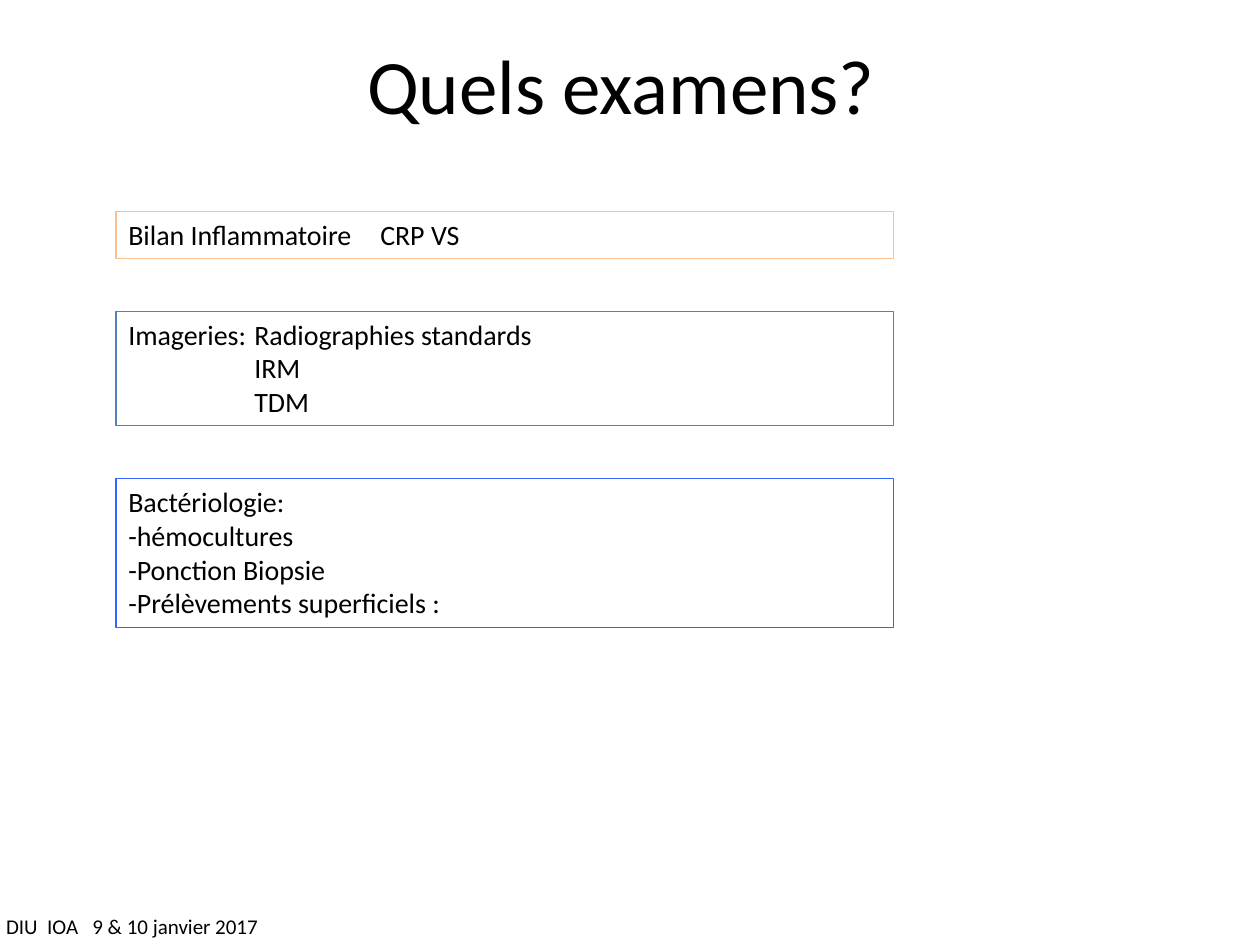
"""Build the slide listing the examinations to request."""
from lxml.etree import SubElement
from pptx import Presentation
from pptx.dml.color import RGBColor
from pptx.enum.shapes import MSO_SHAPE as Shape
from pptx.enum.text import MSO_ANCHOR as Anchor, PP_ALIGN as Align
from pptx.oxml.ns import qn
from pptx.util import Inches, Pt

BLACK = RGBColor(0x00, 0x00, 0x00)
ORANGE = RGBColor(0xFA, 0xC0, 0x90)
BLUE = RGBColor(0x4F, 0x81, 0xBD)
BRIGHT_BLUE = RGBColor(0x33, 0x66, 0xFF)

TITLE = "Quels examens? "
FOOTER = "DIU  IOA   9 & 10 janvier 2017"
EXAMS = [
    (ORANGE, ["Bilan Inflammatoire \tCRP VS"]),
    (BLUE, ["Imageries:\tRadiographies standards", "\tIRM", "\tTDM"]),
    (BRIGHT_BLUE, ["Bactériologie:", "-hémocultures", "-Ponction Biopsie",
                   "-Prélèvements superficiels :"]),
]

WIDTH, HEIGHT = 10, 7.5
BOX_LEFT, BOX_TOP, BOX_WIDTH = 0.92, 1.68, 6.17
LINE_HEIGHT, PADDING, GAP = 0.27, 0.1, 0.42
TAB_STOPS = (1, 2)


def write(shape, lines, size, align=Align.LEFT, anchor=Anchor.TOP, wrap=True):
    frame = shape.text_frame
    frame.word_wrap = wrap
    frame.vertical_anchor = anchor
    for index, line in enumerate(lines):
        paragraph = frame.add_paragraph() if index else frame.paragraphs[0]
        paragraph.alignment = align
        if "\t" in line:
            tabs = SubElement(paragraph._p.get_or_add_pPr(), qn("a:tabLst"))
            for stop in TAB_STOPS:
                SubElement(tabs, qn("a:tab"), pos=str(Inches(stop)), algn="l")
        run = paragraph.add_run()
        run.text = line
        run.font.name = "Calibri"
        run.font.size = Pt(size)
        run.font.color.rgb = BLACK


def add_exam_box(slide, top, height, color, lines):
    box = slide.shapes.add_shape(Shape.RECTANGLE, Inches(BOX_LEFT), Inches(top),
                                 Inches(BOX_WIDTH), Inches(height))
    box.shadow.inherit = False
    box.fill.background()
    box.line.color.rgb = color
    box.line.width = Pt(0.75)
    write(box, lines, 16)


def main():
    presentation = Presentation()
    presentation.slide_width, presentation.slide_height = Inches(WIDTH), Inches(HEIGHT)
    slide = presentation.slides.add_slide(presentation.slide_layouts[6])

    footer = slide.shapes.add_textbox(Inches(-0.05), Inches(7.2), Inches(2.23), Inches(0.3))
    write(footer, [FOOTER], 12, wrap=False)
    title = slide.shapes.add_textbox(Inches(0.5), Inches(0.22), Inches(WIDTH - 1), Inches(0.89))
    write(title, [TITLE], 44, Align.CENTER, Anchor.MIDDLE)

    top = BOX_TOP
    for color, lines in EXAMS:
        height = PADDING + LINE_HEIGHT * len(lines)
        add_exam_box(slide, top, height, color, lines)
        top += height + GAP

    presentation.save("out.pptx")


if __name__ == "__main__":
    main()
